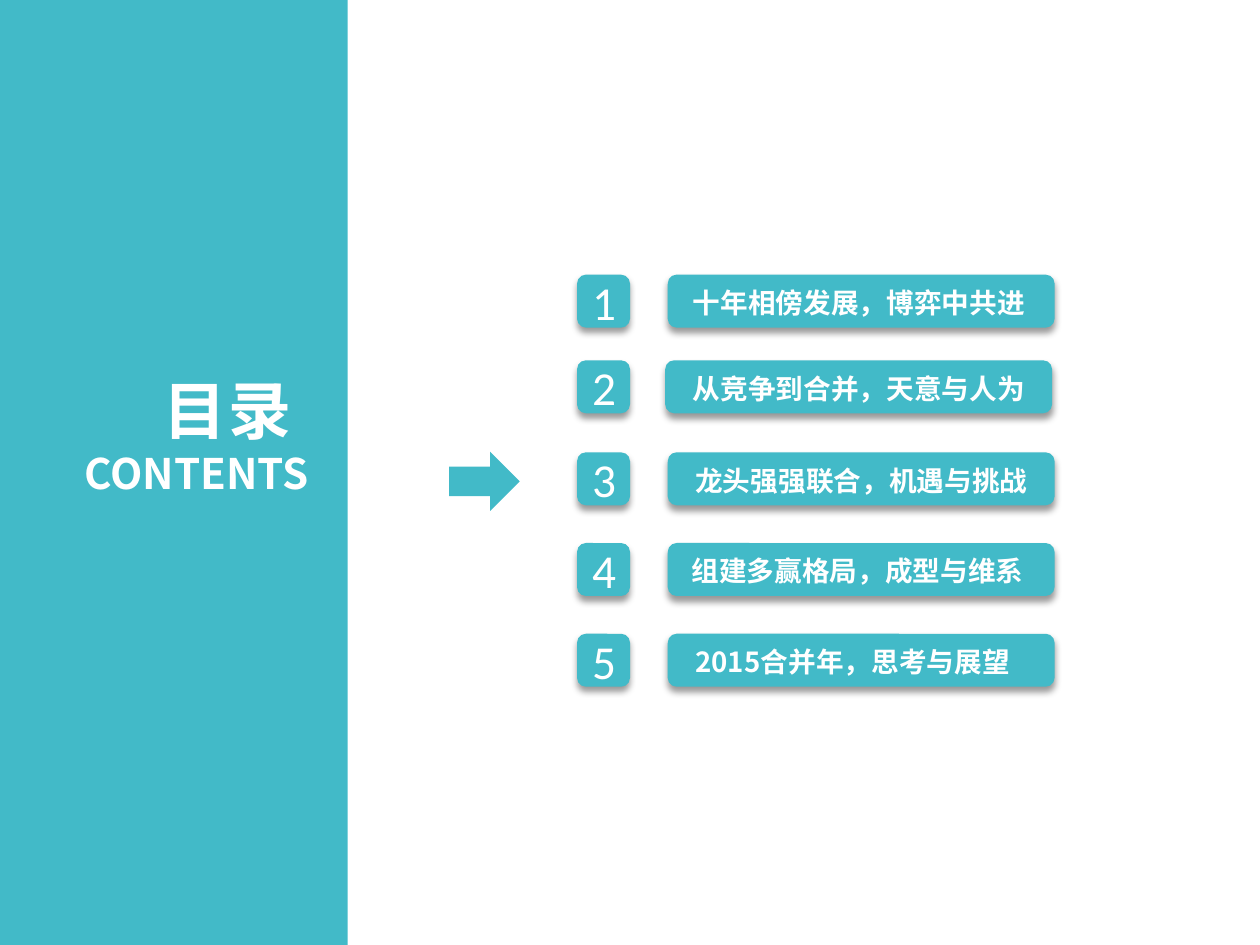
from dataclasses import dataclass

from lxml import etree
from pptx import Presentation
from pptx import util as u
from pptx.dml.color import RGBColor
from pptx.enum import shapes, text
from pptx.oxml.ns import qn

TEAL = RGBColor(0x42, 0xBA, 0xC8)
WHITE = RGBColor(0xFF, 0xFF, 0xFF)
BLACK = RGBColor(0x00, 0x00, 0x00)

UNIT = u.Inches(0.1)
COLUMNS, ROWS = 100, 75
TILE = 4.2
BAR_WIDTH = 30.7
NUMBER_LEFT = 45.8
LABEL_DROP, LABEL_HEIGHT = 0.4, 3.7

HEADING = {"name": "Noto Sans CJK SC", "size": u.Pt(36), "bold": True}
SUBHEADING = {**HEADING, "size": u.Pt(24)}
LABEL = {**HEADING, "size": u.Pt(15.8)}
NUMBER = {"name": "Calibri", "size": u.Pt(27), "bold": False}
FITTED = {"word_wrap": True, "auto_size": text.MSO_AUTO_SIZE.SHAPE_TO_FIT_TEXT}
CENTRED = {"word_wrap": True, "vertical_anchor": text.MSO_ANCHOR.MIDDLE}


@dataclass(frozen=True)
class Box:
    """Place and size in grid columns and rows."""

    left: float
    top: float
    width: float
    height: float

    def lengths(self) -> list[int]:
        """Return the place and size as slide lengths."""
        return [round(value * UNIT) for value in (self.left, self.top, self.width, self.height)]


@dataclass(frozen=True)
class Chapter:
    """One contents entry and where its parts stand on the grid."""

    title: str
    top: float
    label_left: float
    label_width: float
    bar_left: float = 53


CHAPTERS = [
    Chapter("十年相傍发展，博弈中共进", 21.8, 54, 29.1),
    Chapter("从竞争到合并，天意与人为", 28.6, 54, 28.5, 52.8),
    Chapter("龙头强强联合，机遇与挑战", 35.9, 54.2, 30.5),
    Chapter("组建多赢格局，成型与维系", 43.1, 53.9, 28.6),
    Chapter("2015合并年，思考与展望", 50.3, 54.2, 28.6),
]


def apply_format(target, values: dict) -> None:
    """Set each format value on the target."""
    for attribute, value in values.items():
        setattr(target, attribute, value)


def write(paragraph, wording: str, style: dict, align, spacing: float = 0) -> None:
    """Write white text in one style, with letter spacing in points."""
    paragraph.alignment = align
    run = paragraph.add_run()
    run.text = wording
    apply_format(run.font, style)
    run.font.color.rgb = WHITE
    properties = run.font._element
    if spacing:
        properties.set("spc", str(round(spacing * 100)))
    etree.SubElement(properties, qn("a:ea"), typeface=style["name"])


def add_block(parent, kind, box: Box, shadowed: bool = False):
    """Add a teal shape, with a soft shadow below if asked."""
    block = parent.add_shape(kind, *box.lengths())
    block.fill.solid()
    block.fill.fore_color.rgb = TEAL
    block.line.fill.background()
    block.shadow.inherit = False
    if shadowed:
        effects = block._element.spPr.find(qn("a:effectLst"))
        shadow = etree.SubElement(
            effects, qn("a:outerShdw"), blurRad=str(u.Pt(4)), dist=str(u.Pt(3)),
            dir="5400000", algn="t", rotWithShape="0",
        )
        tint = etree.SubElement(shadow, qn("a:srgbClr"), val=str(BLACK))
        etree.SubElement(tint, qn("a:alpha"), val="40000")
    return block


def add_label(parent, box: Box):
    """Add a wrapping text box and return its text frame."""
    frame = parent.add_textbox(*box.lengths()).text_frame
    apply_format(frame, FITTED)
    return frame


def add_chapter(parent, number: int, chapter: Chapter) -> None:
    """Add a numbered tile and its grouped title bar."""
    rounded = shapes.MSO_SHAPE.ROUNDED_RECTANGLE
    tile = add_block(parent, rounded, Box(NUMBER_LEFT, chapter.top, TILE, TILE), True)
    apply_format(tile.text_frame, CENTRED)
    write(tile.text_frame.paragraphs[0], str(number), NUMBER, text.PP_ALIGN.CENTER)

    entry = parent.add_group_shape().shapes
    add_block(entry, rounded, Box(chapter.bar_left, chapter.top, BAR_WIDTH, TILE), True)
    title = add_label(
        entry,
        Box(chapter.label_left, chapter.top + LABEL_DROP, chapter.label_width, LABEL_HEIGHT),
    )
    write(title.paragraphs[0], chapter.title, LABEL, text.PP_ALIGN.LEFT)


def main() -> None:
    """Build the contents slide."""
    deck = Presentation()
    apply_format(deck, {"slide_width": COLUMNS * UNIT, "slide_height": ROWS * UNIT})
    canvas = deck.slides.add_slide(deck.slide_layouts[6]).shapes

    add_block(canvas, shapes.MSO_SHAPE.RECTANGLE, Box(0, 0, 27.6, ROWS))
    heading = add_label(canvas, Box(2.5, 29, 23, 11.1))
    write(heading.paragraphs[0], "目录 ", HEADING, text.PP_ALIGN.RIGHT, 1.5)
    write(heading.add_paragraph(), "CONTENTS", SUBHEADING, text.PP_ALIGN.RIGHT)

    for number, chapter in enumerate(CHAPTERS, 1):
        add_chapter(canvas, number, chapter)

    arrow = add_block(canvas, shapes.MSO_SHAPE.DOWN_ARROW, Box(36.1, 35.4, 4.7, 5.6))
    arrow.rotation = 270
    deck.save("out.pptx")


if __name__ == "__main__":
    main()
